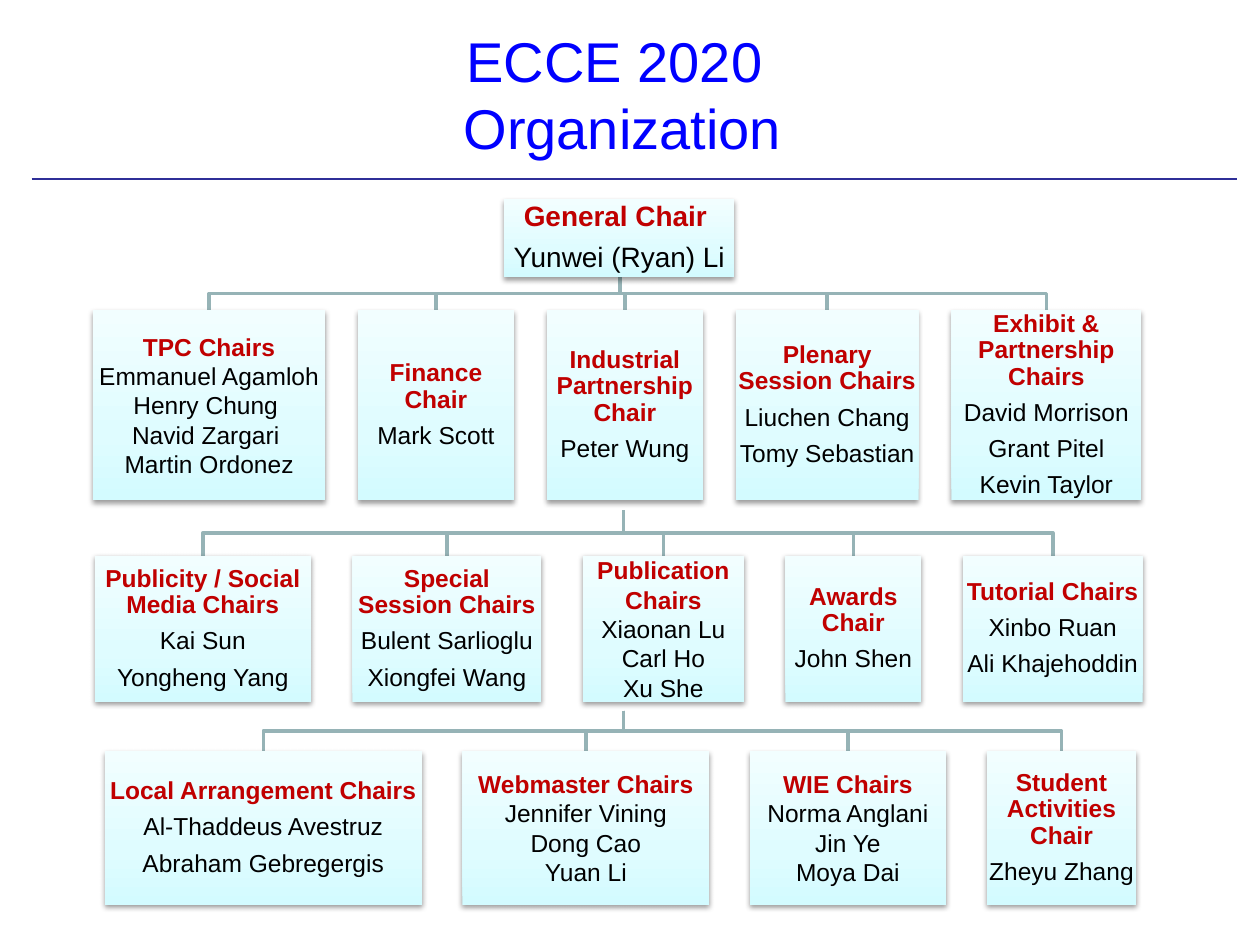
import pptx
import pptx.dml.color
import pptx.enum.shapes
import pptx.enum.text
import pptx.oxml
import pptx.oxml.ns
import pptx.util

Inches = pptx.util.Inches
Pt = pptx.util.Pt
RGBColor = pptx.dml.color.RGBColor

BLUE = RGBColor(0x00, 0x00, 0xFF)
NAVY = RGBColor(0x2F, 0x2F, 0x98)
TEAL = RGBColor(0x96, 0xB3, 0xB6)
RED = RGBColor(0xC0, 0x00, 0x00)
BLACK = RGBColor(0x00, 0x00, 0x00)
CARD_STOPS = (
    (0, RGBColor(0xD3, 0xFB, 0xFF)),
    (35, RGBColor(0xDF, 0xFC, 0xFF)),
    (100, RGBColor(0xF2, 0xFE, 0xFF)),
)

MIDDLE = pptx.enum.text.MSO_ANCHOR.MIDDLE
CENTER = pptx.enum.text.PP_ALIGN.CENTER
CARD_FRAME = {
    "word_wrap": True, "vertical_anchor": MIDDLE,
    "margin_left": Inches(0.01), "margin_right": Inches(0.01),
    "margin_top": Inches(0.01), "margin_bottom": Inches(0.01),
}

GENERAL = ("General Chair ", ["Yunwei (Ryan) Li"], False)
ROWS = [
    ((0.74, 2.46, 8.32, 1.51), (4.92, 2.2), [
        (1.84, "TPC Chairs", ["Emmanuel Agamloh", "Henry Chung ", "Navid Zargari ",
                              "Martin Ordonez"], True),
        (1.24, "Finance Chair", ["Mark Scott"], False),
        (1.24, "Industrial Partnership Chair", ["Peter Wung"], False),
        (1.45, "Plenary Session Chairs", ["Liuchen Chang", "Tomy Sebastian"], False),
        (1.51, "Exhibit & Partnership Chairs",
         ["David Morrison", "Grant Pitel", "Kevin Taylor"], False),
    ]),
    ((0.75, 4.41, 8.32, 1.16), (4.95, 4.05), [
        (1.72, "Publicity / Social Media Chairs", ["Kai Sun", "Yongheng Yang"], False),
        (1.5, "Special Session Chairs", ["Bulent Sarlioglu", "Xiongfei Wang"], False),
        (1.28, "Publication Chairs", ["Xiaonan Lu", "Carl Ho", "Xu She"], True),
        (1.08, "Awards Chair", ["John Shen"], False),
        (1.43, "Tutorial Chairs", ["Xinbo Ruan", "Ali Khajehoddin"], False),
    ]),
    ((0.83, 5.96, 8.19, 1.22), (4.95, 5.64), [
        (2.52, "Local Arrangement Chairs",
         ["Al-Thaddeus Avestruz", "Abraham Gebregergis"], False),
        (1.96, "Webmaster Chairs", ["Jennifer Vining", "Dong Cao", "Yuan Li"], True),
        (1.56, "WIE Chairs", ["Norma Anglani", "Jin Ye", "Moya Dai"], True),
        (1.19, "Student Activities Chair", ["Zheyu Zhang"], False),
    ]),
]


def set_all(obj, values):
    """Set each attribute of obj named in values."""
    for name, value in values.items():
        setattr(obj, name, value)


def set_font(font, size, color, bold=False):
    """Format a font in Arial."""
    set_all(font, {"name": "Arial", "size": Pt(size), "bold": bold})
    font.color.rgb = color


def add_effects(sp, inner=""):
    """Append an effect list to the shape properties."""
    ns = pptx.oxml.ns.nsdecls("a")
    sp.element.spPr.append(
        pptx.oxml.parse_xml(f"<a:effectLst {ns}>{inner}</a:effectLst>"))


def fill_card(sp):
    """Give a card its vertical gradient and soft shadow."""
    stops = "".join(
        f'<a:gs pos="{pos * 1000}"><a:srgbClr val="{color}"/></a:gs>'
        for pos, color in CARD_STOPS)
    ns = pptx.oxml.ns.nsdecls("a")
    sp.line.fill.background()
    sp.element.spPr.insert(2, pptx.oxml.parse_xml(
        f'<a:gradFill {ns} rotWithShape="1"><a:gsLst>{stops}</a:gsLst>'
        '<a:lin ang="16200000" scaled="0"/></a:gradFill>'))
    add_effects(sp, f'<a:outerShdw blurRad="{Pt(3.1)}" dist="{Pt(1.6)}" dir="5400000" '
                    'rotWithShape="0"><a:srgbClr val="000000">'
                    '<a:alpha val="38000"/></a:srgbClr></a:outerShdw>')


def add_heading(s, left, top, width, height):
    """Place the title and the rule below it."""
    rule = s.shapes.add_connector(
        pptx.enum.shapes.MSO_CONNECTOR.STRAIGHT,
        Inches(0.25), Inches(top + height + 0.01),
        Inches(9.82), Inches(top + height + 0.01))
    rule.line.color.rgb = NAVY
    rule.line.width = Pt(1.5)
    add_effects(rule)
    sp = s.shapes.title
    set_all(sp, {"left": Inches(left), "top": Inches(top),
                 "width": Inches(width), "height": Inches(height)})
    tf = sp.text_frame
    set_all(tf, {"word_wrap": True, "vertical_anchor": MIDDLE})
    p = tf.paragraphs[0]
    p.alignment = CENTER
    for i, line in enumerate(("ECCE 2020 ", "Organization")):
        if i:
            p.add_line_break()
        r = p.add_run()
        r.text = line
        set_font(r.font, 32, BLUE)


def add_card(s, left, top, width, height, role, names, tight, size=14):
    """Place one card with a role and the people who hold it."""
    sp = s.shapes.add_shape(
        pptx.enum.shapes.MSO_SHAPE.RECTANGLE,
        Inches(left), Inches(top), Inches(width), Inches(height))
    fill_card(sp)
    tf = sp.text_frame
    set_all(tf, CARD_FRAME)
    for i, text in enumerate([role, *names]):
        p = tf.add_paragraph() if i else tf.paragraphs[0]
        p.alignment = CENTER
        if not tight:
            set_all(p, {"line_spacing": 0.9, "space_after": Pt(round(size * 0.4, 1))})
        r = p.add_run()
        r.text = text
        set_font(r.font, size, BLACK if i else RED, bold=not i)


def add_branch(s, start, end):
    """Draw an elbow line from the stem down to a card."""
    (x1, y1), (x2, y2) = start, end
    mid = (y1 + y2) / 2
    fb = s.shapes.build_freeform(Inches(x1), Inches(y1))
    fb.add_line_segments(
        [(Inches(x), Inches(y)) for x, y in ((x1, mid), (x2, mid), (x2, y2))], close=False)
    sp = fb.convert_to_shape()
    sp.fill.background()
    sp.line.color.rgb = TEAL
    sp.line.width = Pt(2)
    sp.shadow.inherit = False


def add_row(s, left, top, width, height, stem, cards):
    """Spread cards with equal gaps over a row and join them to a stem."""
    gap = (width - sum(card[0] for card in cards)) / (len(cards) - 1)
    x = left
    for card_width, role, names, tight in cards:
        add_branch(s, stem, (x + card_width / 2, top))
        add_card(s, x, top, card_width, height, role, names, tight)
        x += card_width + gap


def main():
    """Build the organization slide."""
    prs = pptx.Presentation()
    set_all(prs, {"slide_width": Inches(10), "slide_height": Inches(7.5)})
    s = prs.slides.add_slide(prs.slide_layouts[5])
    add_heading(s, 0.44, 0.08, 9, 1.33)
    for box, stem, cards in ROWS:
        add_row(s, *box, stem, cards)
    add_card(s, 4, 1.58, 1.83, 0.62, *GENERAL, size=16)
    prs.save("out.pptx")


if __name__ == "__main__":
    main()
